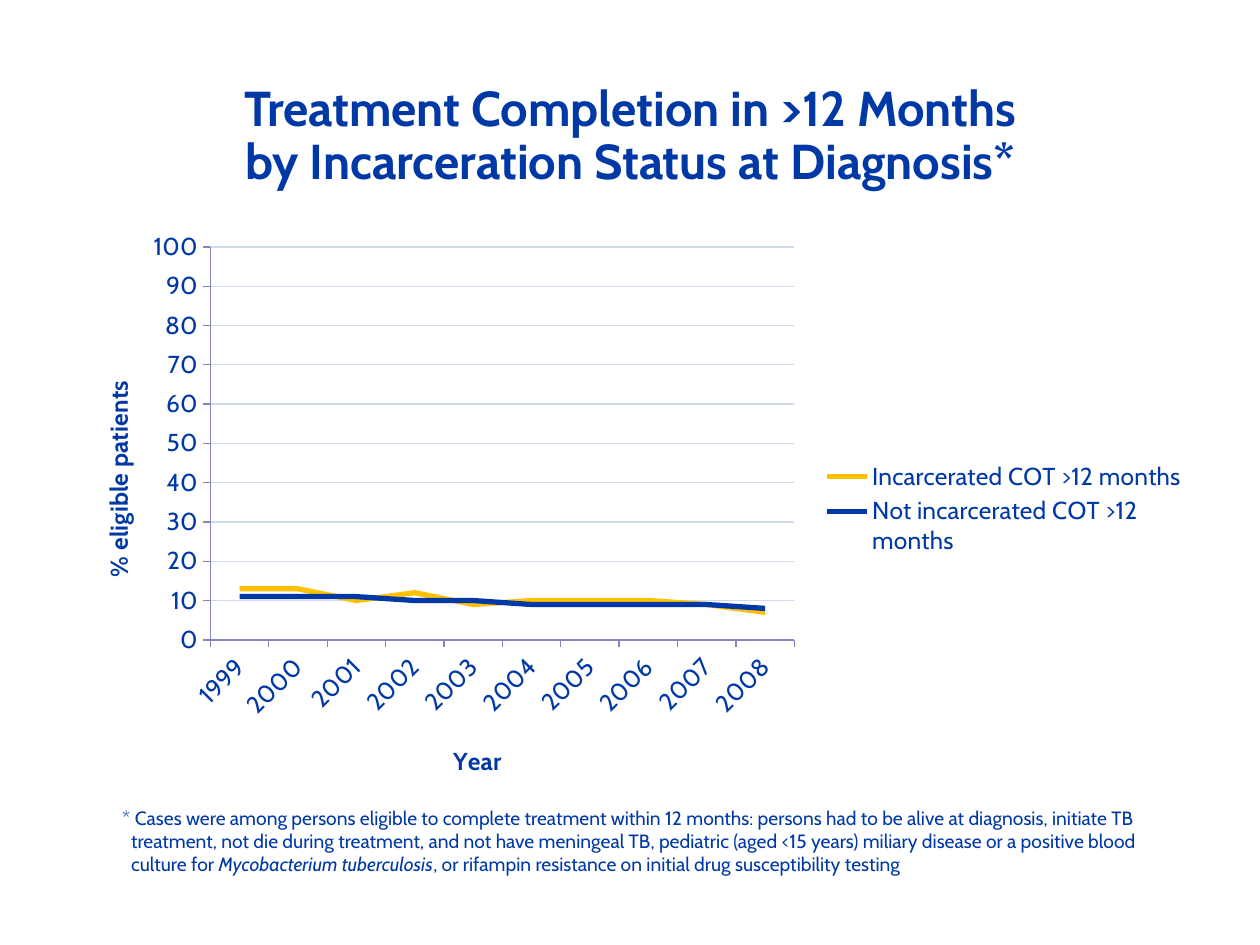
from lxml import etree
from pptx import Presentation
from pptx.chart.data import CategoryChartData
from pptx.dml.color import RGBColor
from pptx.enum.chart import XL_CHART_TYPE as CT, XL_LEGEND_POSITION as LP, XL_TICK_MARK as TM
from pptx.enum.text import MSO_ANCHOR, MSO_AUTO_SIZE, PP_ALIGN
from pptx.oxml.ns import qn
from pptx.util import Inches, Pt

BLUE = RGBColor(0x00, 0x39, 0xA6)
GOLD = RGBColor(0xFF, 0xC0, 0x00)
GRID = RGBColor(0xD1, 0xDA, 0xED)
AXIS = RGBColor(0x85, 0x85, 0xBD)
FONT = "Cabin"

# Content; \v is a line break
TITLE = "Treatment Completion in >12 Months\vby Incarceration Status at Diagnosis*"
NOTE = [  # text, italic
    ("* Cases were among persons eligible to complete treatment within 12 months: "
     "persons had to be alive at diagnosis, initiate TB\v"
     "treatment, not die during treatment, and not have meningeal TB, pediatric "
     "(aged <15 years) miliary disease or a positive blood\vculture for ", False),
    ("Mycobacterium tuberculosis", True),
    (", or rifampin resistance on initial drug susceptibility testing", False),
]
YEARS = [str(year) for year in range(1999, 2009)]
SERIES = [
    ("Incarcerated COT >12 months", GOLD, (13, 13, 10, 12, 9, 10, 10, 10, 9, 7)),
    ("Not incarcerated COT >12 months", BLUE, (11, 11, 11, 10, 10, 9, 9, 9, 9, 8)),
]


def set_font(font, size, bold=False, italic=False):
    values = {"name": FONT, "size": Pt(size), "bold": bold, "italic": italic}
    for name, value in values.items():
        setattr(font, name, value)
    font.color.rgb = BLUE


def place(shape, left, top, width, height):
    box = {"left": left, "top": top, "width": width, "height": height}
    for name, value in box.items():
        setattr(shape, name, Inches(value))
    tf = shape.text_frame
    tf.auto_size, tf.vertical_anchor = MSO_AUTO_SIZE.NONE, MSO_ANCHOR.BOTTOM
    return tf.paragraphs[0]


def set_layout(element, index, inner=False, **box):
    """Position a chart part by fractions of the chart area."""
    for old in element.findall(qn("c:layout")):
        element.remove(old)
    layout = etree.Element(qn("c:layout"))
    manual = etree.SubElement(layout, qn("c:manualLayout"))
    settings = {"layoutTarget": "inner"} if inner else {}
    settings.update(xMode="edge", yMode="edge", **box)
    for name, value in settings.items():
        etree.SubElement(manual, qn("c:" + name)).set("val", str(value))
    element.insert(index, layout)


prs = Presentation()
prs.slide_width, prs.slide_height = Inches(10), Inches(7.5)
s = prs.slides.add_slide(prs.slide_layouts[1])

# Title
p = place(s.shapes.title, 0.5, 0.3, 9, 1.25)
p.text = TITLE
p.alignment, p.line_spacing = PP_ALIGN.CENTER, Pt(30)
for r in p.runs:
    set_font(r.font, 28, bold=True)

# Footnote with a small hanging indent
p = place(s.placeholders[1], 0.5, 6.33, 9, 0.67)
pPr = p._p.get_or_add_pPr()
pPr.set("marL", str(Inches(0.44)))
pPr.set("indent", str(Inches(-0.07)))
etree.SubElement(pPr, qn("a:buNone"))
p.space_before = Pt(0)
for text, italic in NOTE:
    for i, line in enumerate(text.split("\v")):
        if i:
            p.add_line_break()
        r = p.add_run()
        r.text = line
        set_font(r.font, 11, italic=italic)

# Line chart
data = CategoryChartData()
data.categories = YEARS
for name, _, values in SERIES:
    data.add_series(name, values)
chart = s.shapes.add_chart(CT.LINE, Inches(0.5), Inches(1.75), Inches(9), Inches(4.58), data).chart
set_font(chart.font, 10)
chart.has_title = False
chart.plots[0].vary_by_categories = False
for series, (_, color, _) in zip(chart.plots[0].series, SERIES):
    series.smooth = False
    series.format.line.color.rgb = color
    series.format.line.width = Pt(3)
set_layout(chart._chartSpace.chart.plotArea, 0, inner=True, x=0.13, y=0.046, w=0.515, h=0.681)

# Axes
for axis, title, x, y in ((chart.category_axis, "Year", 0.34, 0.9),
                          (chart.value_axis, "% eligible patients", 0.03, 0.27)):
    axis.major_tick_mark, axis.minor_tick_mark = TM.OUTSIDE, TM.NONE
    axis.format.line.color.rgb = AXIS
    set_font(axis.tick_labels.font, 14)
    p = axis.axis_title.text_frame.paragraphs[0]
    r = p.add_run()
    r.text = title
    set_font(r.font, 14, bold=True)
    set_layout(axis.axis_title._element, 1, x=x, y=y)
labels = chart.category_axis._element.find(qn("c:txPr"))
labels.find(qn("a:bodyPr")).set("rot", str(-45 * 60000))
axis = chart.value_axis
axis.minimum_scale, axis.maximum_scale, axis.major_unit = 0, 100, 10
axis.major_gridlines.format.line.color.rgb = GRID
axis.major_gridlines.format.line.width = Pt(0.75)

# Legend
chart.has_legend = True
chart.legend.position = LP.RIGHT
chart.legend.include_in_layout = False
set_font(chart.legend.font, 14)
set_layout(chart.legend._element, 1, x=0.665, y=0.41, w=0.33, h=0.18)

prs.save("out.pptx")
